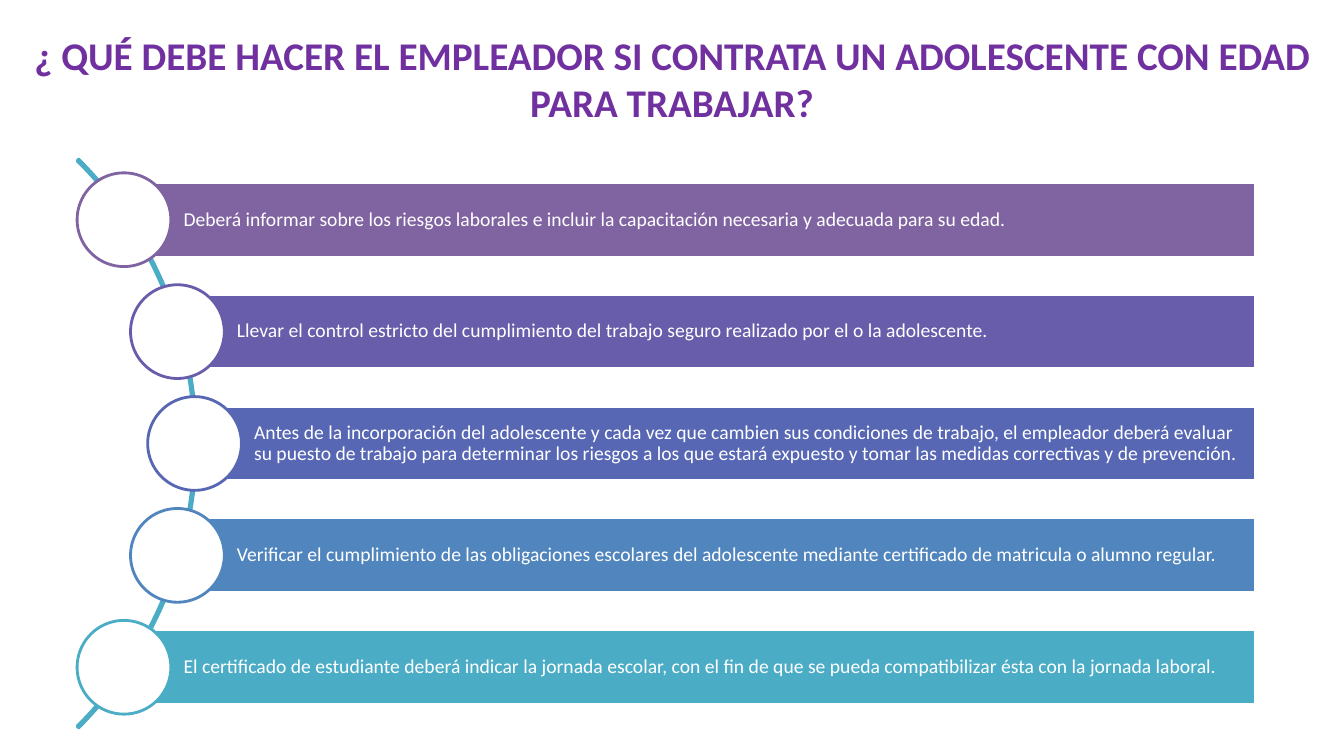
from pptx import Presentation
from pptx.dml.color import RGBColor
from pptx.enum.shapes import MSO_SHAPE
from pptx.enum.text import MSO_ANCHOR, MSO_AUTO_SIZE, PP_ALIGN
from pptx.util import Inches, Pt

WHITE = "FFFFFF"
MIDDLE_Y, ROW_STEP = 4.4, 1.11
BAR_RIGHT, BAR_HEIGHT = 12.45, 0.74
CIRCLE, ARC = 0.93, 7.98

# Bar colour, left edge of the bar (centre of its circle), text
STEPS = [
    ("8064A2", 1.23, "Deberá informar sobre los riesgos laborales e incluir la capacitación "
     "necesaria y adecuada para su edad."),
    ("685DAB", 1.76, "Llevar el control estricto del cumplimiento del trabajo seguro realizado "
     "por el o la adolescente."),
    ("5767B4", 1.93, "Antes de la incorporación del adolescente y cada vez que cambien sus "
     "condiciones de trabajo, el empleador deberá evaluar su puesto de trabajo para determinar "
     "los riesgos a los que estará expuesto y tomar las medidas correctivas y de prevención."),
    ("5185BD", 1.76, "Verificar el cumplimiento de las obligaciones escolares del adolescente "
     "mediante certificado de matricula o alumno regular."),
    ("4BACC6", 1.23, "El certificado de estudiante deberá indicar la jornada escolar, con el fin "
     "de que se pueda compatibilizar ésta con la jornada laboral."),
]


def rgb(value):
    return RGBColor.from_string(value)


def add_outlined(kind, left, middle, width, height, fill, line):
    """Add a shape centred vertically on middle; fill None leaves it empty."""
    sp = s.shapes.add_shape(kind, Inches(left), Inches(middle - height / 2),
                            Inches(width), Inches(height))
    sp.shadow.inherit = False
    if fill:
        sp.fill.solid()
        sp.fill.fore_color.rgb = rgb(fill)
    else:
        sp.fill.background()
    sp.line.color.rgb = rgb(line)
    sp.line.width = Pt(2)
    return sp


prs = Presentation()
prs.slide_width, prs.slide_height = Inches(13.33), Inches(7.5)
s = prs.slides.add_slide(prs.slide_layouts[5])

title = s.shapes.title
title.left, title.top = 0, Inches(0.26)
title.width, title.height = prs.slide_width, Inches(1.04)
tf = title.text_frame
tf.text = "¿ QUÉ DEBE HACER EL EMPLEADOR SI CONTRATA UN ADOLESCENTE CON EDAD PARA TRABAJAR?"
tf.word_wrap = True
tf.auto_size = MSO_AUTO_SIZE.NONE
tf.vertical_anchor = MSO_ANCHOR.TOP
p = tf.paragraphs[0]
p.alignment = PP_ALIGN.CENTER
font = p.runs[0].font
font.name, font.size, font.bold = "Calibri", Pt(28), True
font.color.rgb = rgb("7030A0")

# Thin arc from 315° to 45°; angles are in units of 100000/60000 degrees
arc = add_outlined(MSO_SHAPE.BLOCK_ARC, -6.03, MIDDLE_Y, ARC, ARC, None, "4BACC6")
for i, value in enumerate((189, 27, 0.003)):
    arc.adjustments[i] = value

for row, (color, left, text) in enumerate(STEPS):
    middle = MIDDLE_Y + (row - 2) * ROW_STEP
    bar = add_outlined(MSO_SHAPE.RECTANGLE, left, middle, BAR_RIGHT - left, BAR_HEIGHT,
                       color, WHITE)
    tf = bar.text_frame
    tf.text = text
    tf.word_wrap = True
    tf.vertical_anchor = MSO_ANCHOR.MIDDLE
    tf.margin_left = Inches(0.59)
    tf.margin_top = tf.margin_right = tf.margin_bottom = Inches(0.04)
    p = tf.paragraphs[0]
    p.alignment = PP_ALIGN.LEFT
    p.line_spacing = 0.9
    font = p.runs[0].font
    font.name, font.size = "Calibri", Pt(14)
    font.color.rgb = rgb(WHITE)

    add_outlined(MSO_SHAPE.OVAL, left - CIRCLE / 2, middle, CIRCLE, CIRCLE, WHITE, color)

prs.save("out.pptx")
